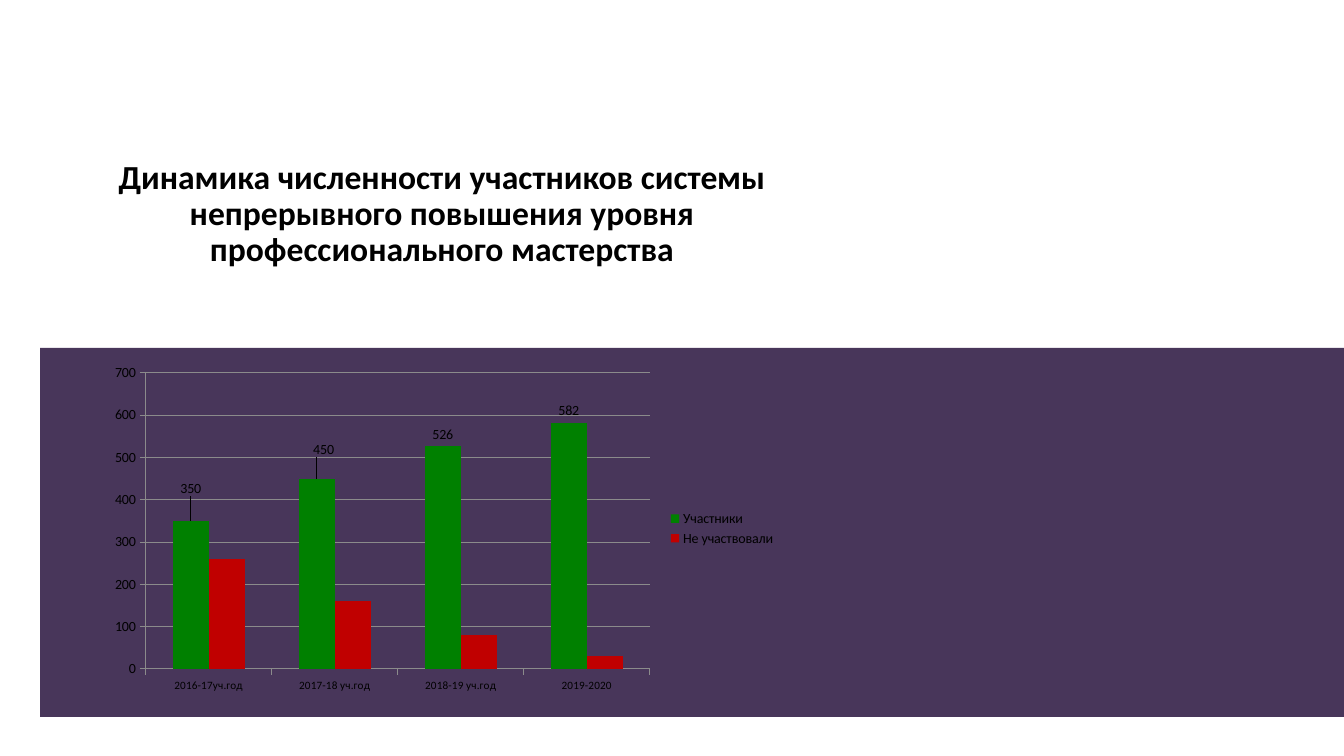
from lxml import etree
from pptx import Presentation
from pptx.chart.data import CategoryChartData
from pptx.dml.color import RGBColor
from pptx.enum.chart import XL_CHART_TYPE, XL_LABEL_POSITION, XL_LEGEND_POSITION, XL_TICK_MARK
from pptx.enum.shapes import MSO_SHAPE
from pptx.enum.text import MSO_ANCHOR, PP_ALIGN
from pptx.oxml.ns import qn
from pptx.util import Pt

RECTANGLE = MSO_SHAPE.RECTANGLE
CLUSTERED = XL_CHART_TYPE.COLUMN_CLUSTERED
OUTSIDE_END = XL_LABEL_POSITION.OUTSIDE_END
LEGEND_RIGHT = XL_LEGEND_POSITION.RIGHT
TICK_OUT = XL_TICK_MARK.OUTSIDE
TOP = MSO_ANCHOR.TOP
CENTER = PP_ALIGN.CENTER
EMU_PER_PX = 914400 / 100.8
TITLE_ONLY = 5


def px(length):
    """Turn whole pixels into EMU."""
    return round(length * EMU_PER_PX)


def color(hex_string):
    """Turn a hex string into a colour."""
    return RGBColor.from_string(hex_string)


def manual_layout(**values):
    """Build a chart layout element from its named settings."""
    layout = etree.Element(qn("c:layout"))
    manual = etree.SubElement(layout, qn("c:manualLayout"))
    for name, value in values.items():
        etree.SubElement(manual, qn(f"c:{name}")).set("val", str(value))
    return layout


class SlideBuilder:
    """Hold the style and the current slide."""

    font = "Calibri"
    ink = "000000"
    band_fill = "48365A"
    axis_line = "8B8B8B"

    def __init__(self, slide):
        """Keep the slide to be filled."""
        self.slide = slide

    def style(self, font, size, bold=False):
        """Apply the common text style."""
        font.name = self.font
        font.size = Pt(size)
        font.bold = bold
        font.color.rgb = color(self.ink)

    def band(self, *box):
        """Add the plain background band."""
        band = self.slide.shapes.add_shape(RECTANGLE, *map(px, box))
        band.shadow.inherit = False
        band.fill.solid()
        band.fill.fore_color.rgb = color(self.band_fill)
        band.line.fill.background()

    def title(self, text, *box):
        """Place and format the title."""
        title = self.slide.shapes.title
        title.left, title.top, title.width, title.height = map(px, box)
        frame = title.text_frame
        frame.word_wrap = True
        frame.vertical_anchor = TOP
        paragraph = frame.paragraphs[0]
        paragraph.alignment = CENTER
        paragraph.line_spacing = 0.9
        paragraph.space_before = Pt(0)
        run = paragraph.add_run()
        run.text = text
        self.style(run.font, 24, bold=True)

    def axis(self, axis, size):
        """Format one chart axis."""
        axis.major_tick_mark = TICK_OUT
        axis.format.line.color.rgb = color(self.axis_line)
        self.style(axis.tick_labels.font, size)

    def columns(self, years, series_specs, label_shifts, *box):
        """Add the column chart with labels on its first series."""
        data = CategoryChartData()
        data.categories = years
        for name, values, _ in series_specs:
            data.add_series(name, values)
        chart = self.slide.shapes.add_chart(CLUSTERED, *map(px, box), data).chart
        self.style(chart.font, 10)
        chart.has_title = False
        chart.has_legend = True
        chart.legend.position = LEGEND_RIGHT
        chart.legend.include_in_layout = False
        self.axis(chart.category_axis, 8)
        self.axis(chart.value_axis, 10)
        chart.value_axis.minimum_scale = 0
        chart.value_axis.maximum_scale = 700
        chart.value_axis.major_unit = 100
        chart.value_axis.major_gridlines.format.line.color.rgb = color(self.axis_line)
        plot = chart.plots[0]
        plot.gap_width = 150
        plot.overlap = 0
        plot.vary_by_categories = False
        for series, (_, _, fill) in zip(plot.series, series_specs):
            series.format.fill.solid()
            series.format.fill.fore_color.rgb = color(fill)
        participants = plot.series[0]
        labels = participants.data_labels
        labels.show_value = True
        labels.position = OUTSIDE_END
        self.style(labels.font, 10)
        for index, (x, y) in label_shifts.items():
            label = participants.points[index].data_label
            label.position = OUTSIDE_END
            self.style(label.font, 10)
            element = labels._element.find(f"{qn('c:dLbl')}[{index + 1}]")
            element.insert(1, manual_layout(x=x, y=y))
        plot_area = chart._chartSpace.chart.plotArea
        for layout in plot_area.findall(qn("c:layout")):
            plot_area.remove(layout)
        plot_area.insert(0, manual_layout(
            layoutTarget="inner", xMode="edge", yMode="edge",
            x=0.064, y=0.044, w=0.737, h=0.868))


def main():
    """Build and save the slide."""
    deck = Presentation()
    deck.slide_width, deck.slide_height = px(1344), px(756)
    builder = SlideBuilder(deck.slides.add_slide(deck.slide_layouts[TITLE_ONLY]))
    builder.band(40, 348, 1304, 369)
    builder.title(
        "Динамика численности участников системы непрерывного "
        "повышения уровня профессионального мастерства",
        42, 155, 800, 143)
    builder.columns(
        ["2016-17уч.год", "2017-18 уч.год", "2018-19 уч.год", "2019-2020"],
        [("Участники", (350, 450, 526, 582), "008000"),
         ("Не участвовали", (260, 160, 80, 30), "C00000")],
        {0: (0, -0.06), 1: (0.01, -0.05)},
        102, 358, 684, 341)
    deck.save("out.pptx")


if __name__ == "__main__":
    main()
